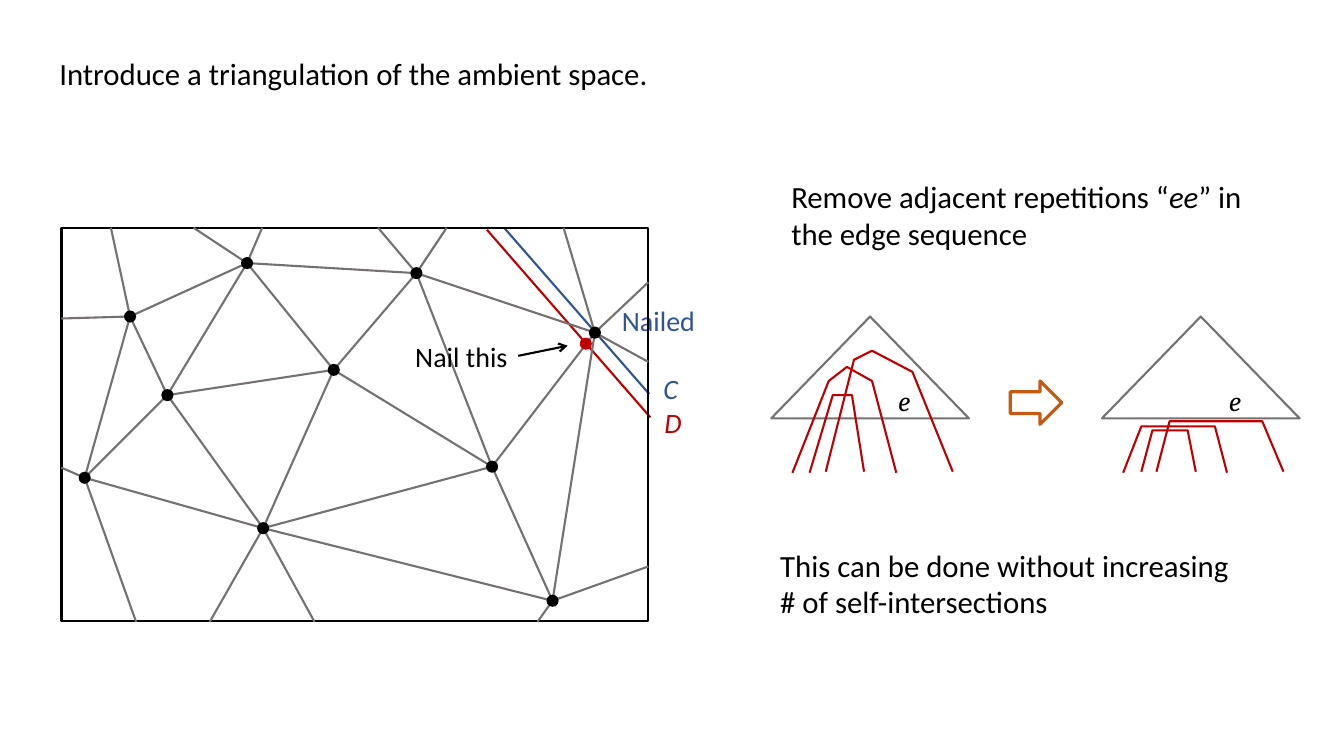
"""Slide on triangulating the ambient space and removing repeated edges."""
from dataclasses import dataclass

from lxml import etree
from pptx import Presentation
from pptx import util as u
from pptx.dml.color import RGBColor
from pptx.enum import shapes, text
from pptx.oxml.ns import qn


@dataclass(frozen=True)
class Theme:
    """Colours, fonts and sizes of the slide."""
    black: str = "000000"
    grey: str = "767171"
    red: str = "C00000"
    blue: str = "2F5597"
    orange: str = "C55A11"
    font: str = "Calibri"
    math_font: str = "Cambria"
    body: float = 22
    label: float = 20
    thin: float = 1.5
    thick: float = 2.25


class Board:
    """Draws styled elements on the current slide."""

    def __init__(self, s, theme):
        """Keep the slide and its theme."""
        self.s, self.theme = s, theme

    def stroke(self, line, color, width):
        """Colour a line and set its width."""
        line.color.rgb = RGBColor.from_string(color)
        line.width = u.Pt(width)

    def line(self, start, end, color, arrow=False):
        """Add a straight line, with an arrowhead at its end if asked."""
        sp = self.s.shapes.add_connector(
            shapes.MSO_CONNECTOR.STRAIGHT, *map(u.Inches, (*start, *end)))
        self.stroke(sp.line, color, self.theme.thin)
        pr = sp._element.spPr
        if arrow:
            etree.SubElement(pr.find(qn("a:ln")), qn("a:tailEnd"), type="arrow")
        etree.SubElement(pr, qn("a:effectLst"))

    def outline(self, kind, box, color, width=None):
        """Add an unfilled preset shape."""
        sp = self.s.shapes.add_shape(kind, *map(u.Inches, box))
        sp.shadow.inherit = False
        sp.fill.background()
        self.stroke(sp.line, color, width or self.theme.thin)

    def dot(self, center, color, size=0.12):
        """Add a filled dot around a centre."""
        x, y = (c - size / 2 for c in center)
        sp = self.s.shapes.add_shape(
            shapes.MSO_SHAPE.OVAL, *map(u.Inches, (x, y, size, size)))
        sp.shadow.inherit = False
        sp.fill.solid()
        sp.fill.fore_color.rgb = RGBColor.from_string(color)
        sp.line.fill.background()

    def path_line(self, points, color):
        """Add an open polyline."""
        start, *rest = [tuple(map(u.Inches, p)) for p in points]
        builder = self.s.shapes.build_freeform(*start, scale=1.0)
        builder.add_line_segments(rest, close=False)
        sp = builder.convert_to_shape()
        sp.shadow.inherit = False
        sp.fill.background()
        self.stroke(sp.line, color, self.theme.thin)

    def text(self, box, *runs, color=None, wrap=True, **fmt):
        """Add a text box of (words, italic) runs."""
        tf = self.s.shapes.add_textbox(*map(u.Inches, box)).text_frame
        tf.word_wrap = wrap
        tf.auto_size = text.MSO_AUTO_SIZE.SHAPE_TO_FIT_TEXT
        p = tf.paragraphs[0]
        base = {"name": self.theme.font, "size": u.Pt(self.theme.body)}
        for words, italic in runs:
            r = p.add_run()
            r.text = words
            for key, value in {**base, **fmt, "italic": italic}.items():
                setattr(r.font, key, value)
            r.font.color.rgb = RGBColor.from_string(color or self.theme.black)


VERTICES = {
    "west": (0.84, 4.74), "south": (2.61, 5.24), "inner": (1.66, 3.92),
    "middle": (3.31, 3.67), "east": (4.88, 4.63), "corner": (5.48, 5.96),
    "nailed": (5.9, 3.3), "north": (2.45, 2.61), "top": (4.13, 2.71),
    "upper": (1.29, 3.14),
}
EDGES = {
    "inner": ["middle", "upper", "south", "north", "west"],
    "middle": ["east", "south", "top", "north"],
    "east": ["corner", "south", "top", "nailed"],
    "upper": ["north", "west"],
    "top": ["north", "nailed"],
    "south": ["west", "corner"],
    "corner": ["nailed"],
}
RIM = {
    "nailed": [(6.43, 2.8), (5.59, 2.26), (6.43, 3.59)],
    "top": [(4.43, 2.26), (3.75, 2.26)],
    "north": [(2.6, 2.26), (1.92, 2.26)],
    "upper": [(1.1, 2.26), (0.61, 3.16)],
    "west": [(0.61, 4.64), (1.35, 6.17)],
    "south": [(2.08, 6.17), (3.12, 6.17)],
    "corner": [(5.33, 6.17), (6.43, 5.62)],
}
CROSSING = [
    [(7.86, 4.69), (8.22, 3.78), (8.4, 3.64), (8.65, 3.78), (8.89, 4.69)],
    [(8.03, 4.69), (8.26, 3.92), (8.45, 3.92), (8.57, 4.68)],
    [(8.19, 4.68), (8.47, 3.57), (8.65, 3.48), (9.05, 3.69), (9.45, 4.68)],
]
REDUCED = [
    [(11.14, 4.69), (11.32, 4.23), (12.05, 4.23), (12.17, 4.69)],
    [(11.32, 4.68), (11.43, 4.27), (11.78, 4.27), (11.86, 4.68)],
    [(11.47, 4.68), (11.6, 4.18), (12.52, 4.18), (12.73, 4.68)],
]


def draw_triangulation(board):
    """Draw the framed triangulation with curves C and D."""
    t = board.theme
    label = {"size": u.Pt(t.label)}
    board.line((4.83, 2.28), (6.45, 4.14), t.red)
    board.text((6.49, 3.97, 0.49, 0.44), ("D", True), color=t.red, **label)
    board.line((5, 2.26), (6.44, 3.91), t.blue)
    board.text((6.48, 3.64, 0.49, 0.44), ("C", True), color=t.blue, **label)
    board.text((6.07, 2.96, 1.5, 0.44), ("Nailed", False), color=t.blue, **label)
    board.outline(shapes.MSO_SHAPE.RECTANGLE, (0.61, 2.26, 5.82, 3.9), t.black)
    for name, ends in EDGES.items():
        for end in ends:
            board.line(VERTICES[name], VERTICES[end], t.grey)
    for name, ends in RIM.items():
        for end in ends:
            board.line(VERTICES[name], end, t.grey)
    for center in VERTICES.values():
        board.dot(center, t.black)
    board.dot((5.81, 3.41), t.red)
    board.text((4.02, 3.32, 1.5, 0.44), ("Nail this", False), **label)
    board.line((5.14, 3.53), (5.63, 3.43), t.black, arrow=True)


def draw_reduction(board):
    """Draw the triangles before and after removing repetitions."""
    t = board.theme
    for left, curves in ((7.65, CROSSING), (10.93, REDUCED)):
        board.outline(shapes.MSO_SHAPE.ISOSCELES_TRIANGLE,
                      (left, 3.14, 1.96, 1.01), t.grey)
        for points in curves:
            board.path_line(points, t.red)
        board.text((left + 1.16, 3.76, 0.33, 0.44), ("e", True), wrap=False,
                   name=t.math_font, size=u.Pt(t.label))
    board.outline(shapes.MSO_SHAPE.RIGHT_ARROW, (10.02, 3.78, 0.51, 0.43),
                  t.orange, t.thick)


def main():
    """Build and save the slide."""
    prs = Presentation()
    prs.slide_width, prs.slide_height = u.Inches(13.33), u.Inches(7.5)
    board = Board(prs.slides.add_slide(prs.slide_layouts[6]), Theme())
    board.text((0.49, 0.49, 6.33, 0.47),
               ("Introduce a triangulation of the ambient space.", False))
    draw_triangulation(board)
    draw_reduction(board)
    board.text((7.75, 1.71, 4.76, 0.84),
               ("Remove adjacent repetitions “", False), ("ee", True),
               ("” in the edge sequence", False))
    board.text((7.64, 5.37, 4.79, 0.84),
               ("This can be done without increasing # of self-intersections", False))
    prs.save("out.pptx")


if __name__ == "__main__":
    main()
